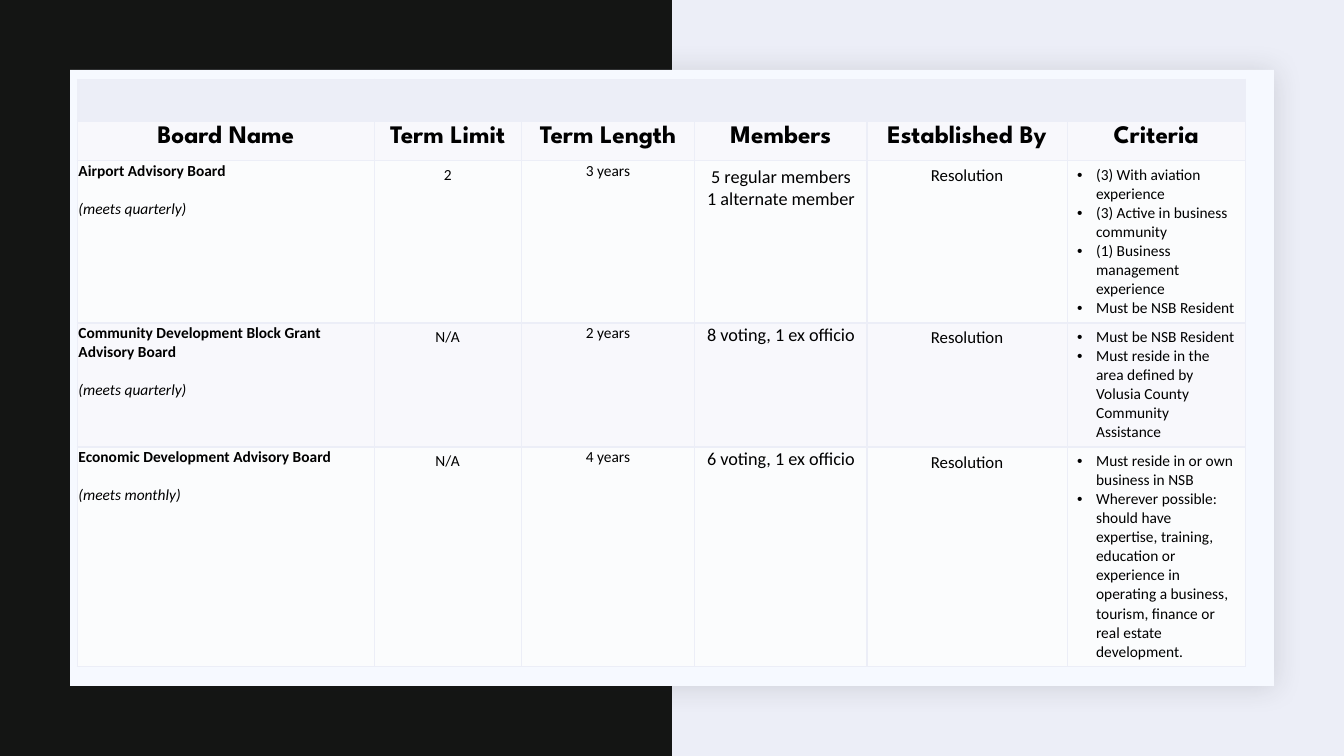
import lxml.etree
import pptx
import pptx.dml.color
import pptx.enum.shapes
import pptx.enum.text
import pptx.oxml
import pptx.oxml.ns
import pptx.util

Pt = pptx.util.Pt
CENTER = pptx.enum.text.PP_ALIGN.CENTER
COLORS = {"mist": "ECEEF7", "ink": "141514", "card": "F6F9FF", "text": "000000",
          "shade": "1F2125", "tint": "F8F8FC", "pale": "FBFCFD"}
COLUMN_WIDTHS = [212, 105, 124, 123, 143, 127.4]
ROW_HEIGHTS = [29.4, 28.8, 115.7, 88.6, 156.5]
HEADINGS = ["Board Name", "Term Limit", "Term Length", "Members", "Established By", "Criteria"]
BOARDS = [
    ("Airport Advisory Board", "(meets quarterly)", "2", "3 years",
     ["5 regular members", "1 alternate member"],
     ["(3) With aviation experience", "(3) Active in business community",
      "(1) Business management experience", "Must be NSB Resident"]),
    ("Community Development Block Grant Advisory Board", "(meets quarterly)", "N/A", "2 years",
     ["8 voting, 1 ex officio"],
     ["Must be NSB Resident",
      "Must reside in the area defined by Volusia County Community Assistance"]),
    ("Economic Development Advisory Board", "(meets monthly)", "N/A", "4 years",
     ["6 voting, 1 ex officio"],
     ["Must reside in or own business in NSB",
      "Wherever possible: should have expertise, training, education or experience in "
      "operating a business, tourism, finance or real estate development."]),
]
HEADING = {"name": "League Spartan", "size": Pt(18), "bold": True}
BODY = {"name": "Calibri", "size": Pt(11), "bold": False}
NAME = {**BODY, "bold": True}
MEETING = {**BODY, "italic": True}
MEMBERS = {**BODY, "size": Pt(13)}
ORIGIN = {**BODY, "size": Pt(12)}
CENTERED = {"alignment": CENTER}
NAME_GAP = {"space_after": Pt(13.4)}
TIGHT = {"margin_left": Pt(0.72), "margin_right": Pt(0.72),
         "margin_top": Pt(0.72), "margin_bottom": Pt(0)}


def assign(target, values):
    for key, value in values.items():
        setattr(target, key, value)


class SlideBuilder:
    """Draws styled elements, measured in points, on the current slide."""

    def __init__(self, deck):
        self.page = deck.slides.add_slide(deck.slide_layouts[6])

    def color(self, name):
        return pptx.dml.color.RGBColor.from_string(COLORS[name])

    def paint(self, fill, name):
        fill.solid()
        fill.fore_color.rgb = self.color(name)

    def element(self, parent, tag, **attributes):
        child = lxml.etree.SubElement(parent, pptx.oxml.ns.qn(tag))
        for key, value in attributes.items():
            child.set(key, str(value))
        return child

    def panel(self, left, top, width, height, fill):
        box = self.page.shapes.add_shape(pptx.enum.shapes.MSO_SHAPE.RECTANGLE,
                                         Pt(left), Pt(top), Pt(width), Pt(height))
        self.paint(box.fill, fill)
        box.line.fill.background()
        box.shadow.inherit = False
        return box

    def shadow(self, box):
        effects = box._element.spPr.find(pptx.oxml.ns.qn("a:effectLst"))
        outer = self.element(effects, "a:outerShdw", blurRad=Pt(20), dist=Pt(2),
                             dir=45 * 60000, algn="ctr", rotWithShape=0)
        tone = self.element(outer, "a:srgbClr", val=COLORS["shade"])
        self.element(tone, "a:alpha", val=15000)

    def table(self, left, top, widths, heights):
        frame = self.page.shapes.add_table(len(heights), len(widths), Pt(left), Pt(top),
                                           Pt(sum(widths)), Pt(sum(heights)))
        grid = frame.table
        assign(grid, {"first_row": False, "horz_banding": False})
        for column, width in zip(grid.columns, widths):
            column.width = Pt(width)
        for row, height in zip(grid.rows, heights):
            row.height = Pt(height)
        return grid

    def cell(self, cell, fill, bottom=1):
        properties = cell._tc.get_or_add_tcPr()
        for side, weight in {"L": 1, "R": 1, "T": 1, "B": bottom}.items():
            line = self.element(properties, f"a:ln{side}", w=Pt(weight))
            solid = self.element(line, "a:solidFill")
            self.element(solid, "a:srgbClr", val=COLORS["mist"])
        self.paint(cell.fill, fill)

    def text(self, cell, lines, bullets=False, margins=None):
        assign(cell, margins or {})
        for index, (words, font, layout) in enumerate(lines):
            frame = cell.text_frame
            para = frame.add_paragraph() if index else frame.paragraphs[0]
            assign(para, layout)
            span = para.add_run()
            span.text = words
            assign(span.font, font)
            span.font.color.rgb = self.color("text")
            if bullets:
                properties = para._p.get_or_add_pPr()
                properties.set("marL", str(Pt(13.5)))
                properties.set("indent", str(Pt(-13.5)))
                self.element(properties, "a:buFont", typeface="Arial")
                self.element(properties, "a:buChar", char="•")


def main():
    deck = pptx.Presentation()
    assign(deck, {"slide_width": Pt(960), "slide_height": Pt(540)})
    builder = SlideBuilder(deck)
    builder.paint(builder.page.background.fill, "mist")
    builder.panel(0, 0, 480, 540, "ink")
    builder.shadow(builder.panel(50, 50, 860, 440, "card"))

    grid = builder.table(55.3, 56.6, COLUMN_WIDTHS, ROW_HEIGHTS)
    for row, fill in enumerate(["mist", "tint", "pale", "tint", "pale"]):
        for column in range(len(COLUMN_WIDTHS)):
            builder.cell(grid.cell(row, column), fill, bottom=1 if row else 3)
    for column, heading in enumerate(HEADINGS):
        builder.text(grid.cell(1, column), [(heading, HEADING, CENTERED)])
    for row, (name, meeting, limit, length, members, criteria) in enumerate(BOARDS, start=2):
        cells = [grid.cell(row, column) for column in range(len(HEADINGS))]
        builder.text(cells[0], [(name, NAME, NAME_GAP), (meeting, MEETING, {})], margins=TIGHT)
        builder.text(cells[1], [(limit, BODY, CENTERED)])
        builder.text(cells[2], [(length, BODY, CENTERED)], margins=TIGHT)
        builder.text(cells[3], [(line, MEMBERS, CENTERED) for line in members],
                     margins=TIGHT if len(members) == 1 else None)
        builder.text(cells[4], [("Resolution", ORIGIN, CENTERED)])
        builder.text(cells[5], [(line, BODY, {}) for line in criteria], bullets=True)
    deck.save("out.pptx")


if __name__ == "__main__":
    main()
